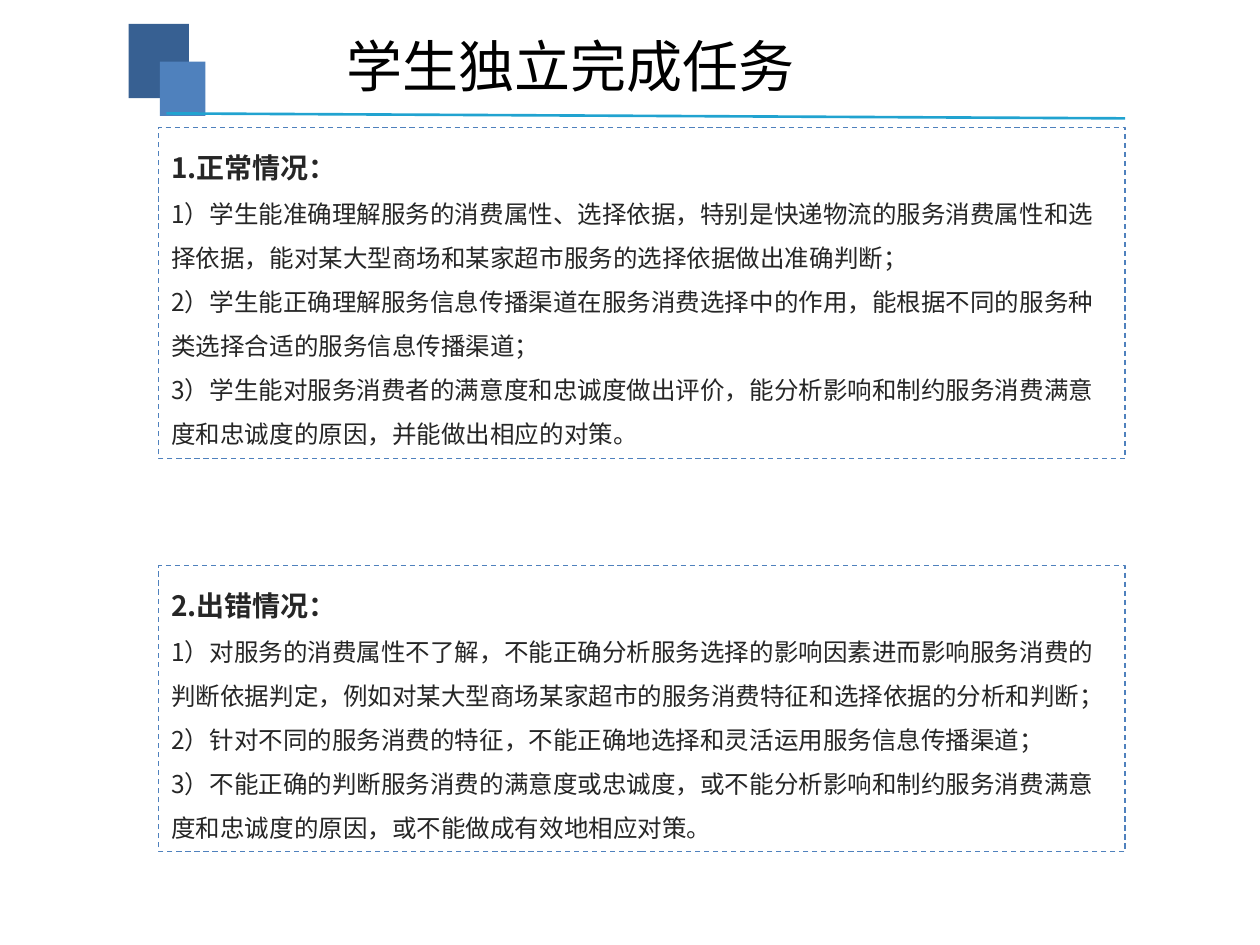
"""Build the slide on students completing the task independently."""
import pptx
import pptx.util
import pptx.dml.color
import pptx.enum.dml
import pptx.enum.lang
import pptx.enum.shapes
import pptx.enum.text
import pptx.oxml.ns
import lxml.etree

COLORS = {"navy": "376092", "blue": "4F81BD", "cyan": "21A3D0", "ink": "262626", "black": "000000"}
BODY_FONT = "Noto Sans CJK SC"
LEFT, WIDTH = 12.6, 76.7
SECTIONS = [
    (13.47, 35.07, [
        "1.正常情况：",
        "1）学生能准确理解服务的消费属性、选择依据，特别是快递物流的服务消费属性和选择依据，能对某大型商场和某家超市服务的选择依据做出准确判断；",
        "2）学生能正确理解服务信息传播渠道在服务消费选择中的作用，能根据不同的服务种类选择合适的服务信息传播渠道；",
        "3）学生能对服务消费者的满意度和忠诚度做出评价，能分析影响和制约服务消费满意度和忠诚度的原因，并能做出相应的对策。",
    ]),
    (59.87, 30.27, [
        "2.出错情况：",
        "1）对服务的消费属性不了解，不能正确分析服务选择的影响因素进而影响服务消费的判断依据判定，例如对某大型商场某家超市的服务消费特征和选择依据的分析和判断；",
        "2）针对不同的服务消费的特征，不能正确地选择和灵活运用服务信息传播渠道；",
        "3）不能正确的判断服务消费的满意度或忠诚度，或不能分析影响和制约服务消费满意度和忠诚度的原因，或不能做成有效地相应对策。",
    ]),
]

presentation = pptx.Presentation()
presentation.slide_width = pptx.util.Inches(10)
presentation.slide_height = pptx.util.Inches(7.5)
slide = presentation.slides.add_slide(presentation.slide_layouts[3])
title, *bodies = slide.placeholders


def share(*percents):
    """Turn alternating horizontal and vertical percentages into lengths."""
    sides = (presentation.slide_width, presentation.slide_height)
    return [int(sides[index % 2] * percent / 100) for index, percent in enumerate(percents)]


def apply(target, formats):
    """Set every attribute named in a dict of format values."""
    for name, value in formats.items():
        setattr(target, name, value)


rgb = {name: pptx.dml.color.RGBColor.from_string(value) for name, value in COLORS.items()}
chinese = pptx.enum.lang.MSO_LANGUAGE_ID.SIMPLIFIED_CHINESE
frame_format = {"word_wrap": True, "auto_size": pptx.enum.text.MSO_AUTO_SIZE.NONE}
edges = ("left", "top", "width", "height")

for body, (top, height, lines) in zip(bodies, SECTIONS):
    apply(body, dict(zip(edges, share(LEFT, top, WIDTH, height))))
    body.line.color.rgb = rgb["blue"]
    apply(body.line, {"width": pptx.util.Pt(0.75), "dash_style": pptx.enum.dml.MSO_LINE.DASH})
    apply(body.text_frame, {**frame_format, "vertical_anchor": pptx.enum.text.MSO_ANCHOR.TOP})
    body.text_frame.text = "\n".join(lines)
    for index, paragraph in enumerate(body.text_frame.paragraphs):
        apply(paragraph, {"line_spacing": 1.5, "space_before": pptx.util.Pt(0),
                          "alignment": pptx.enum.text.PP_ALIGN.LEFT})
        properties = paragraph._p.get_or_add_pPr()
        properties.set("marL", "0")
        properties.set("indent", "0")
        lxml.etree.SubElement(properties, pptx.oxml.ns.qn("a:buNone"))
        run = paragraph.runs[0]
        apply(run.font, {"name": BODY_FONT, "size": pptx.util.Pt(14 if index else 16),
                         "bold": index == 0, "language_id": chinese})
        run.font.color.rgb = rgb["ink"]
        east_asian = lxml.etree.SubElement(run._r.get_or_add_rPr(), pptx.oxml.ns.qn("a:ea"))
        east_asian.set("typeface", BODY_FONT)

for color, area in {"navy": (10.2, 2.53, 4.8, 7.87), "blue": (12.7, 6.53, 3.6, 5.73)}.items():
    square = slide.shapes.add_shape(pptx.enum.shapes.MSO_SHAPE.RECTANGLE, *share(*area))
    square.shadow.inherit = False
    square.fill.solid()
    square.fill.fore_color.rgb = rgb[color]
    square.line.fill.background()

apply(title, dict(zip(edges, share(23.2, 1.33, 44.2, 11.2))))
apply(title.text_frame, {**frame_format, "vertical_anchor": pptx.enum.text.MSO_ANCHOR.MIDDLE})
title.text_frame.text = "学生独立完成任务"
heading = title.text_frame.paragraphs[0]
heading.alignment = pptx.enum.text.PP_ALIGN.CENTER
apply(heading.runs[0].font, {"name": "Times New Roman", "size": pptx.util.Pt(32), "language_id": chinese})
heading.runs[0].font.color.rgb = rgb["black"]

underline = slide.shapes.add_connector(
    pptx.enum.shapes.MSO_CONNECTOR.STRAIGHT, *share(13.2, 12, LEFT + WIDTH, 12.53))
underline.line.color.rgb = rgb["cyan"]
underline.line.width = pptx.util.Pt(1.5)
lxml.etree.SubElement(underline._element.spPr, pptx.oxml.ns.qn("a:effectLst"))

presentation.save("out.pptx")
